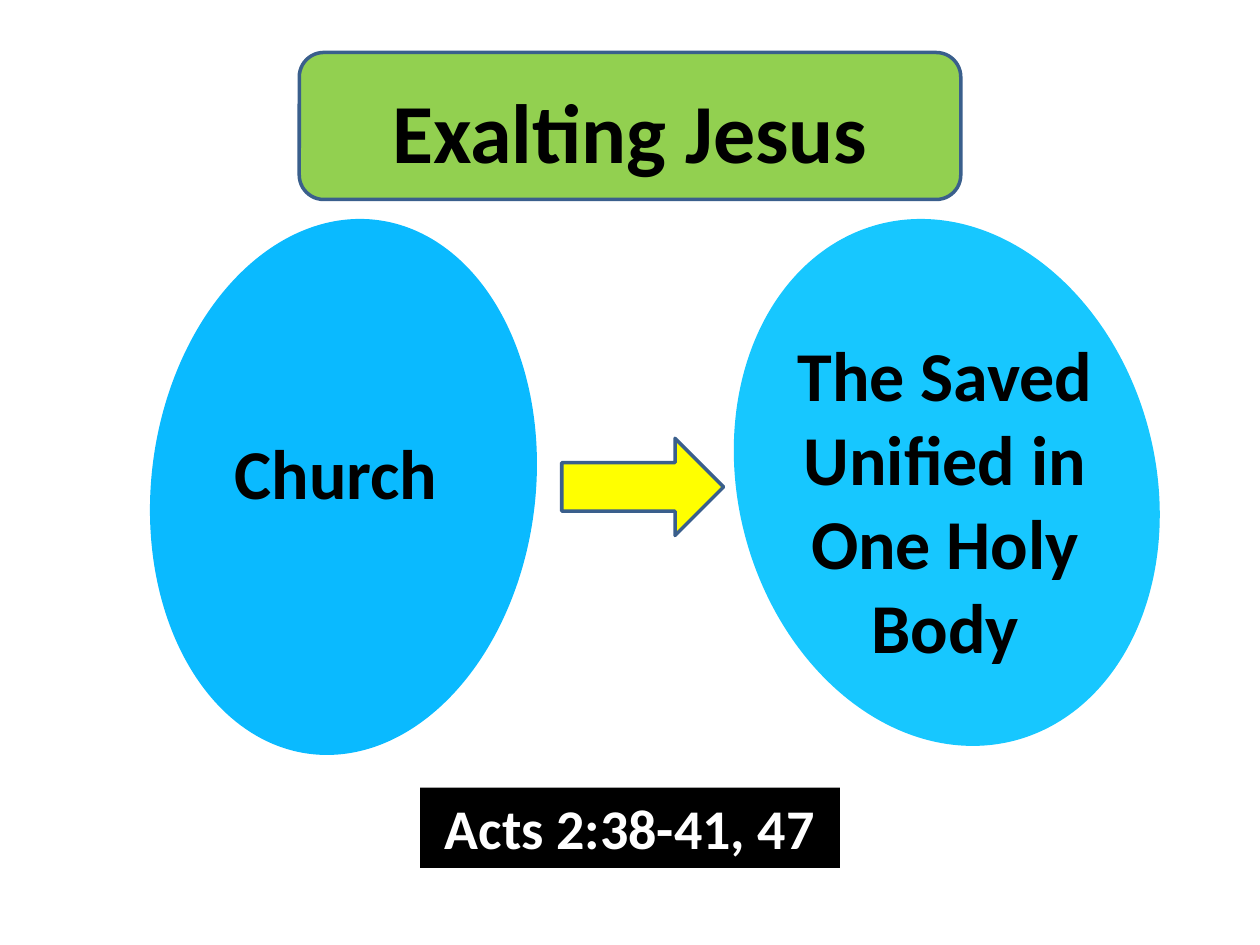
import pptx
import pptx.util
import pptx.dml.color
import pptx.enum.shapes
import pptx.enum.text

Pt = pptx.util.Pt
Kind = pptx.enum.shapes.MSO_SHAPE

HUES = {
    "left": "0ABAFF", "right": "17C7FF", "arrow": "FFFF00", "banner": "92D050",
    "edge": "3A5F8C", "black": "000000", "white": "FFFFFF",
}
TITLE = ("Exalting Jesus", (201, 42, 318, 65.5), 48)
VERSE = ("Acts 2:38-41, 47", 32)
SHAPES = [
    (Kind.OVAL, (86.5, 124.5, 219.5, 307.5), "left", None, 7.2),
    (Kind.OVAL, (421.8, 123.2, 238.5, 305), "right", None, -14.8),
    (Kind.RIGHT_ARROW, (321, 250.5, 92.5, 55.5), "arrow", "edge", 0),
    (Kind.ROUNDED_RECTANGLE, (171, 30, 378, 84), "banner", "edge", 0),
]
LABELS = [
    ("Church", (96, 242, 192, 55.5), 40),
    ("The Saved Unified in One Holy Body", (432, 186, 216, 201), 40),
]


def color(name):
    return pptx.dml.color.RGBColor.from_string(HUES[name])


def draw(slide, kind, box, fill, edge=None, turn=0):
    shape = slide.shapes.add_shape(kind, *map(Pt, box))
    shape.shadow.inherit = False
    shape.rotation = turn
    shape.fill.solid()
    shape.fill.fore_color.rgb = color(fill)
    if edge:
        shape.line.color.rgb = color(edge)
        shape.line.width = Pt(2)
    else:
        shape.line.fill.background()
    return shape


def write(shape, text, size, hue="black"):
    frame = shape.text_frame
    frame.word_wrap = True
    frame.auto_size = pptx.enum.text.MSO_AUTO_SIZE.NONE
    frame.vertical_anchor = pptx.enum.text.MSO_ANCHOR.TOP
    frame.text = text
    para = frame.paragraphs[0]
    para.alignment = pptx.enum.text.PP_ALIGN.CENTER
    para.font.name = "Calibri"
    para.font.size = Pt(size)
    para.font.bold = True
    para.font.color.rgb = color(hue)


def main():
    deck = pptx.Presentation()
    deck.slide_width, deck.slide_height = Pt(720), Pt(540)
    slide = deck.slides.add_slide(deck.slide_layouts[5])
    for item in SHAPES:
        draw(slide, *item)
    for text, box, size in LABELS:
        write(slide.shapes.add_textbox(*map(Pt, box)), text, size)

    text, box, size = TITLE
    title = slide.shapes.title
    title.left, title.top, title.width, title.height = map(Pt, box)
    write(title, text, size)
    slide.shapes._spTree.append(title._element)

    verse = draw(slide, Kind.RECTANGLE, (240, 450, 240, 46), "black")
    write(verse, *VERSE, "white")
    deck.save("out.pptx")


if __name__ == "__main__":
    main()
